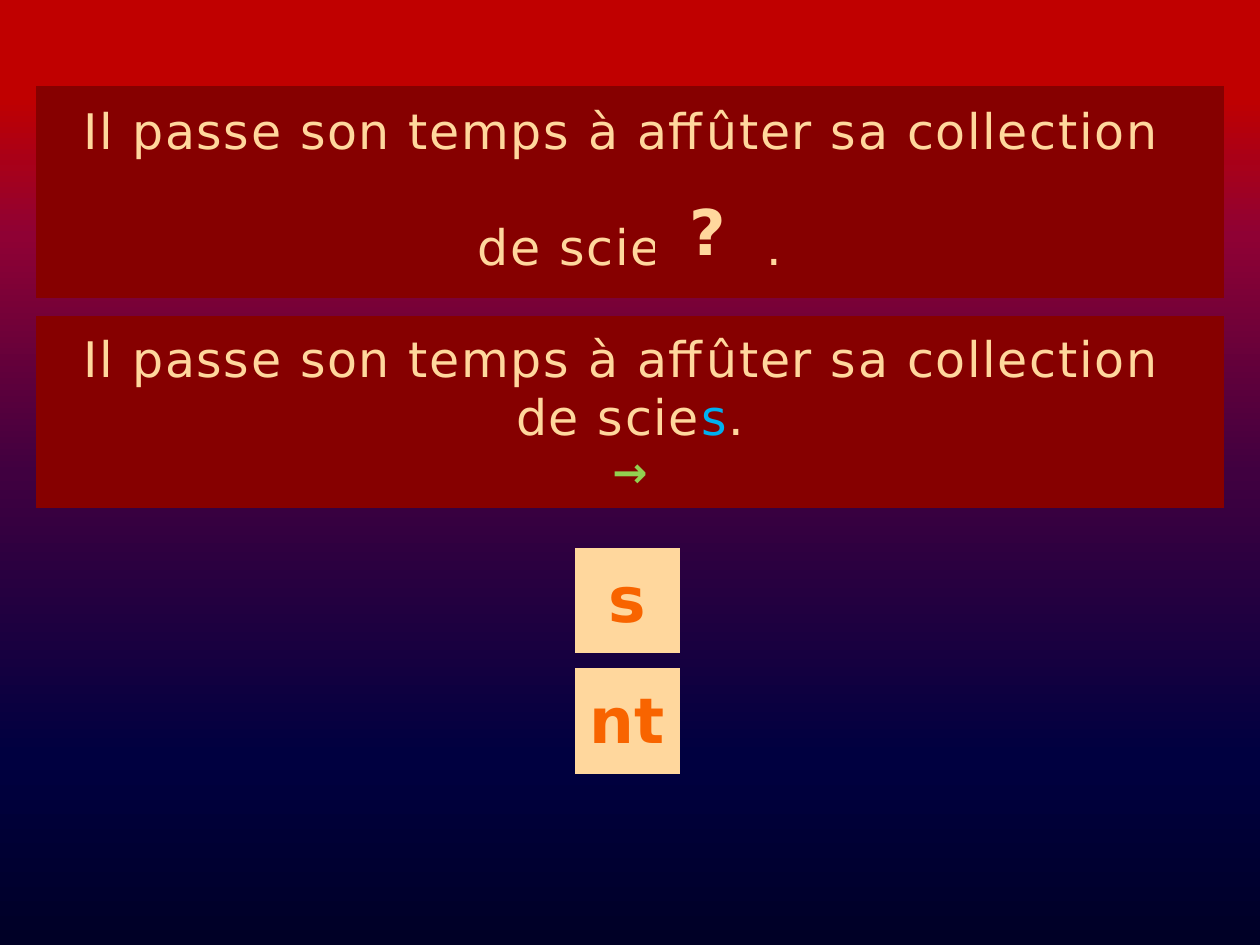
from copy import deepcopy

from pptx import Presentation
from pptx.dml.color import RGBColor
from pptx.enum.shapes import MSO_SHAPE
from pptx.enum.text import MSO_ANCHOR, PP_ALIGN
from pptx.util import Pt

SLIDE_W, SLIDE_H = 720, 540
FONT = "DejaVu Sans"
CREAM, DARK_RED, ORANGE = "FFD79D", "860000", "F86400"
BLUE, GREEN = "00B0F0", "92D050"
BACKDROP_STOPS = [(0, "000026"), (20, "000040"), (50, "400040"),
                  (75, "8F0134"), (90, "C00000")]

SENTENCE = {"size": 28, "color": CREAM, "spacing": 1}
BIG = {"size": 36, "bold": True}
FIRST_LINE = "Il passe son temps à affûter sa collection "


def rgb(hex_color):
    return RGBColor.from_string(hex_color)


def add_button(slide, box, fill=None):
    button = slide.shapes.add_shape(MSO_SHAPE.ACTION_BUTTON_CUSTOM,
                                    *(Pt(length) for length in box))
    button.shadow.inherit = False
    button.line.fill.background()
    if fill:
        button.fill.solid()
        button.fill.fore_color.rgb = rgb(fill)
    return button


def write_lines(button, lines, top=3, bottom=6):
    """Each line is (runs, paragraph format); each run is (text, format)."""
    frame = button.text_frame
    frame_format = {"word_wrap": False, "vertical_anchor": MSO_ANCHOR.MIDDLE,
                    "margin_left": Pt(7.2), "margin_right": Pt(7.2),
                    "margin_top": Pt(top), "margin_bottom": Pt(bottom)}
    for name, value in frame_format.items():
        setattr(frame, name, value)
    for index, (runs, line_format) in enumerate(lines):
        line = frame.paragraphs[0] if index == 0 else frame.add_paragraph()
        for name, value in {"alignment": PP_ALIGN.CENTER, **line_format}.items():
            setattr(line, name, value)
        for text, style in runs:
            run = line.add_run()
            run.text = text
            font_format = {"name": FONT, "size": Pt(style["size"]),
                           "bold": style.get("bold", False)}
            for name, value in font_format.items():
                setattr(run.font, name, value)
            run.font.color.rgb = rgb(style["color"])
            if "spacing" in style:
                run.font._element.set("spc", str(round(style["spacing"] * 100)))


def add_backdrop(slide, box):
    backdrop = add_button(slide, box)
    backdrop.fill.gradient()
    backdrop.fill.gradient_angle = 90
    # The default gradient has two stops: extend it to the full list
    stop_list = backdrop.fill.gradient_stops[0]._gs.getparent()
    for _ in BACKDROP_STOPS[2:]:
        stop_list.append(deepcopy(stop_list[0]))
    for stop, (position, color) in zip(backdrop.fill.gradient_stops, BACKDROP_STOPS):
        stop.position = position / 100
        stop.color.rgb = rgb(color)


def add_question(slide, box):
    left, top, _, _ = box
    # One widened space leaves the gap for the missing ending
    gap = {**SENTENCE, "spacing": 50.5}
    write_lines(add_button(slide, box, DARK_RED), [
        ([(FIRST_LINE, SENTENCE)], {}),
        ([("de scie", SENTENCE), (" ", gap), (".", SENTENCE)],
         {"space_before": Pt(33)}),
    ], top=1.5)
    # Question mark over the gap
    mark = add_button(slide, (left + 353.5, top + 54, 60, 60.5), DARK_RED)
    write_lines(mark, [([("?", {**BIG, "color": CREAM})], {})])


def add_answer(slide, box):
    write_lines(add_button(slide, box, DARK_RED), [
        ([(FIRST_LINE, SENTENCE)], {}),
        ([("de scie", SENTENCE), ("s", {**SENTENCE, "color": BLUE}),
          (".", SENTENCE)], {}),
        ([("→", {**SENTENCE, "size": 24, "color": GREEN, "bold": True})],
         {"space_after": Pt(6)}),
    ], bottom=3)


def add_choices(slide, box, endings, gap=9):
    left, top, side, height = box
    pitch = (height + gap) / len(endings)
    for index, ending in enumerate(endings):
        choice = add_button(
            slide, (left, top + index * pitch, side, pitch - gap), CREAM)
        write_lines(choice, [([(ending, {**BIG, "color": ORANGE})], {})])


def main():
    prs = Presentation()
    prs.slide_width, prs.slide_height = Pt(SLIDE_W), Pt(SLIDE_H)
    slide = prs.slides.add_slide(prs.slide_layouts[6])
    margin = 20.75
    panel_w = SLIDE_W - 2 * margin
    add_backdrop(slide, (0, 0, SLIDE_W, SLIDE_H))
    add_question(slide, (margin, 49, panel_w, 121))
    add_choices(slide, (328.5, 313, 60, 129), ["s", "nt"])
    add_answer(slide, (margin, 180.75, panel_w, 109.5))
    prs.save("out.pptx")


if __name__ == "__main__":
    main()
